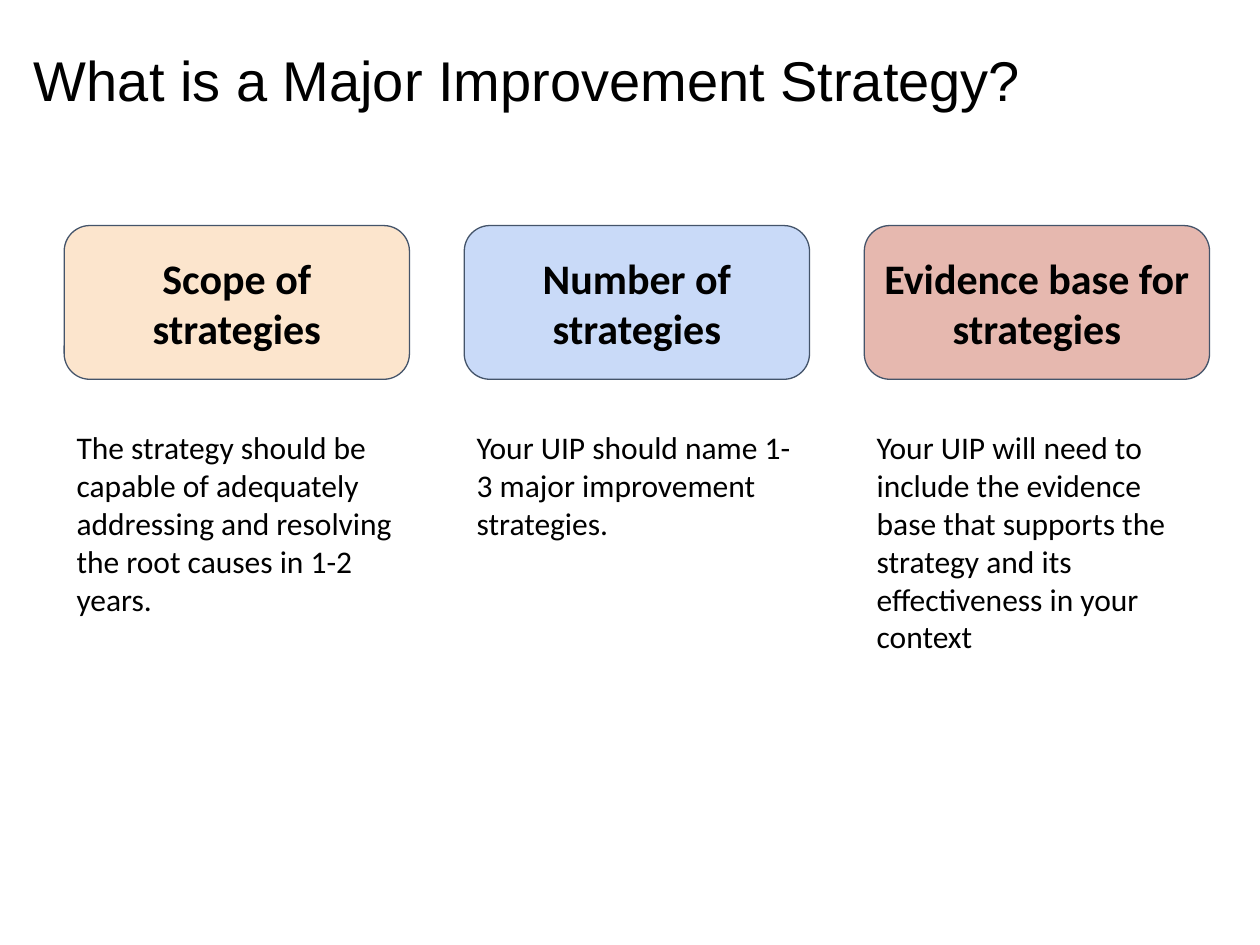
from dataclasses import dataclass

from pptx import Presentation
from pptx.dml.color import RGBColor
from pptx.enum.shapes import MSO_SHAPE
from pptx.enum.text import MSO_ANCHOR, PP_ALIGN
from pptx.util import Inches, Pt


@dataclass(frozen=True)
class Theme:
    """Colours, fonts and type sizes of the slide."""
    text: str = "000000"
    outline: str = "44546A"
    peach: str = "FCE5CD"
    blue: str = "C9DAF8"
    rose: str = "E6B8AF"
    title_font: str = "Arial"
    body_font: str = "Calibri"
    title_size: int = 32
    heading_size: int = 24
    body_size: int = 18


THEME = Theme()
COLUMNS = [
    ("Scope of strategies", THEME.peach,
     "The strategy should be capable of adequately addressing and resolving "
     "the root causes in 1-2 years."),
    ("Number of strategies", THEME.blue,
     "Your UIP should name 1-3 major improvement strategies."),
    ("Evidence base for strategies", THEME.rose,
     "Your UIP will need to include the evidence base that supports the "
     "strategy and its effectiveness in your context"),
]


def write_text(shape, text, font_name, size, margin, bold=False,
               align=PP_ALIGN.LEFT, anchor=MSO_ANCHOR.TOP):
    """Fill a shape with one formatted paragraph."""
    frame = shape.text_frame
    frame.text = text
    frame.word_wrap = True
    frame.vertical_anchor = anchor
    frame.margin_left = frame.margin_right = Inches(margin)
    frame.margin_top = frame.margin_bottom = Inches(margin)
    paragraph = frame.paragraphs[0]
    paragraph.alignment = align
    font = paragraph.runs[0].font
    font.name, font.size, font.bold = font_name, Pt(size), bold
    font.color.rgb = RGBColor.from_string(THEME.text)


def add_title(slide, text, left, top, width, height):
    """Place the slide title in the given box."""
    box = slide.shapes.add_textbox(left, top, width, height)
    write_text(box, text, THEME.title_font, THEME.title_size, 0)


def add_column(slide, heading, fill, body, left, top, width, height):
    """Place a heading card with its explanation below in the given box."""
    card = slide.shapes.add_shape(
        MSO_SHAPE.ROUNDED_RECTANGLE, left, top, width, Inches(1.22))
    card.shadow.inherit = False
    card.fill.solid()
    card.fill.fore_color.rgb = RGBColor.from_string(fill)
    card.line.color.rgb = RGBColor.from_string(THEME.outline)
    card.line.width = Pt(0.75)
    write_text(card, heading, THEME.body_font, THEME.heading_size, 0.1,
               bold=True, align=PP_ALIGN.CENTER, anchor=MSO_ANCHOR.MIDDLE)
    body_offset = Inches(1.51)
    box = slide.shapes.add_textbox(
        left, top + body_offset, width, height - body_offset)
    write_text(box, body, THEME.body_font, THEME.body_size, 0.1)


def add_columns(slide, columns, left, top, width, height):
    """Spread the columns evenly across the given box."""
    column_width = Inches(2.74)
    pitch = (width - column_width) // (len(columns) - 1)
    for index, (heading, fill, body) in enumerate(columns):
        add_column(slide, heading, fill, body,
                   left + index * pitch, top, column_width, height)


def main():
    """Build and save the presentation."""
    presentation = Presentation()
    presentation.slide_width = Inches(10)
    presentation.slide_height = Inches(7.5)
    slide = presentation.slides.add_slide(presentation.slide_layouts[6])
    add_title(slide, "What is a Major Improvement Strategy?",
              Inches(0.27), Inches(0.36), Inches(8.7), Inches(0.62))
    add_columns(slide, COLUMNS,
                Inches(0.51), Inches(1.79), Inches(9.09), Inches(3.53))
    presentation.save("out.pptx")


if __name__ == "__main__":
    main()
